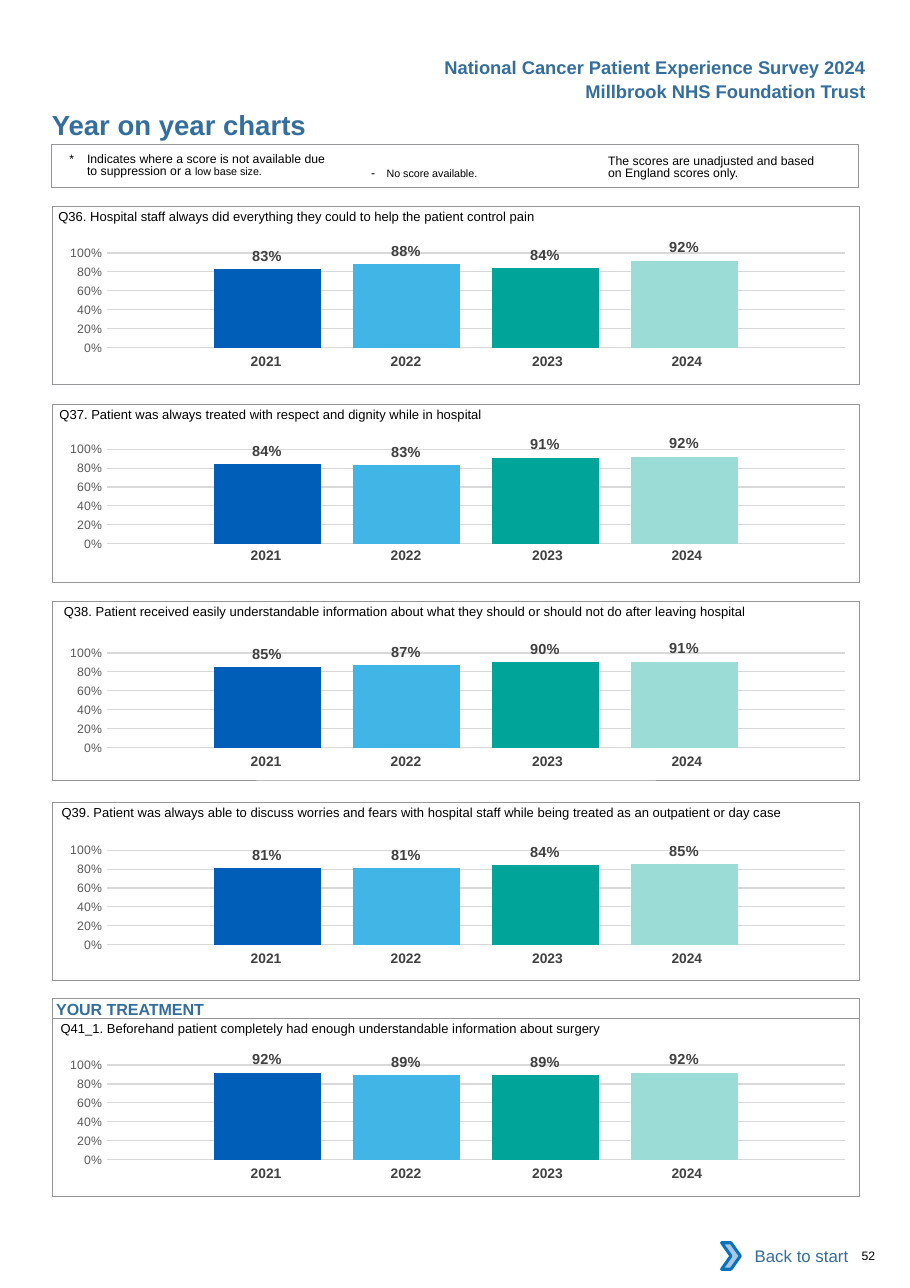
from dataclasses import dataclass

from lxml import etree
from pptx import Presentation
from pptx.chart.data import CategoryChartData
from pptx.dml.color import RGBColor
from pptx.enum.chart import XL_CHART_TYPE as Chart
from pptx.enum.chart import XL_LABEL_POSITION as Spot
from pptx.enum.chart import XL_TICK_MARK as Tick
from pptx.enum.shapes import MSO_SHAPE as Kind
from pptx.enum.text import MSO_ANCHOR as Anchor
from pptx.enum.text import MSO_AUTO_SIZE as Fit
from pptx.enum.text import PP_ALIGN as Align
from pptx.oxml import parse_xml
from pptx.oxml.ns import nsdecls
from pptx.shapes.autoshape import Shape
from pptx.slide import Slide
from pptx.text.text import Font, TextFrame
from pptx.util import Inches, Pt

BLACK = RGBColor(0x00, 0x00, 0x00)
WHITE = RGBColor(0xFF, 0xFF, 0xFF)
BLUE = RGBColor(0x33, 0x6E, 0x9F)
EDGE = RGBColor(0x93, 0x95, 0x98)
GRID = RGBColor(0xD9, 0xD9, 0xD9)
AXIS = RGBColor(0x59, 0x59, 0x59)
LABEL = RGBColor(0x40, 0x40, 0x40)
YEAR = RGBColor(0x41, 0x40, 0x42)
ARROW = RGBColor(0xA8, 0xC7, 0xE9)
ARROW_EDGE = RGBColor(0x0A, 0x74, 0xBB)
BARS = (RGBColor(0x00, 0x5E, 0xB8), RGBColor(0x41, 0xB6, 0xE6),
        RGBColor(0x00, 0xA4, 0x99), RGBColor(0x9C, 0xDC, 0xD7))

YEARS = ("2021", "2022", "2023", "2024")
WIDTHS = (1.27, 1.27, 1.34, 1.27)
INSETS = (0, 0, 0.04, 0.12)
PLOT = {"x": 0.079, "y": 0.145, "w": 0.915, "h": 0.666}
LEFT, WIDE, TALL = 0.48, 7.32, 1.62


@dataclass
class Panel:
    text: str
    left: float
    top: float
    chart: float
    years: float
    scores: tuple[float, ...]


@dataclass
class Note:
    text: str
    left: float
    top: float
    width: float
    hang: float = 0
    small: str = ""


PANELS = (
    Panel("Q36. Hospital staff always did everything they could to help the patient control pain",
          0.53, 1.87, 2.11, 3.16, (0.83, 0.88, 0.84, 0.92)),
    Panel("Q37. Patient was always treated with respect and dignity while in hospital",
          0.54, 3.67, 3.89, 4.92, (0.84, 0.83, 0.91, 0.92)),
    Panel("Q38. Patient received easily understandable information about what they should "
          "or should not do after leaving hospital",
          0.58, 5.46, 5.74, 6.79, (0.85, 0.87, 0.9, 0.91)),
    Panel("Q39. Patient was always able to discuss worries and fears with hospital staff "
          "while being treated as an outpatient or day case",
          0.56, 7.28, 7.53, 8.58, (0.81, 0.81, 0.84, 0.85)),
    Panel("Q41_1. Beforehand patient completely had enough understandable information about surgery",
          0.55, 9.24, 9.48, 10.53, (0.92, 0.89, 0.89, 0.92)),
)
NOTES = (
    Note("*\tIndicates where a score is not available due to suppression or a ",
         0.63, 1.39, 2.35, 0.16, "low base size."),
    Note("-\t", 3.37, 1.52, 1.8, 0.14, "No score available."),
    Note("The scores are unadjusted and based on England scores only.", 5.52, 1.41, 1.95),
)


def style(font: Font, size: float, color: RGBColor, bold: bool = False) -> None:
    font.name, font.size, font.bold = "Arial", Pt(size), bold
    font.color.rgb = color


def inset(frame: TextFrame, left: float = 0, top: float = 0) -> None:
    frame.margin_left, frame.margin_top = Inches(left), Inches(top)
    frame.margin_right = frame.margin_bottom = 0
    frame.word_wrap = True


def write(slide: Slide, text: str, left: float, top: float, width: float, high: float,
          size: float, color: RGBColor = BLACK, bold: bool = False,
          align: Align = Align.LEFT) -> TextFrame:
    box = slide.shapes.add_textbox(Inches(left), Inches(top), Inches(width), Inches(high))
    frame = box.text_frame
    inset(frame)
    para = frame.paragraphs[0]
    para.text, para.alignment = text, align
    style(para.font, size, color, bold)
    return frame


def outline(slide: Slide, left: float, top: float, width: float, high: float,
            weight: float = 0.5) -> Shape:
    box = slide.shapes.add_shape(Kind.RECTANGLE, Inches(left), Inches(top),
                                 Inches(width), Inches(high))
    box.shadow.inherit = False
    box.fill.background()
    box.line.color.rgb = EDGE
    box.line.width = Pt(weight)
    return box


def add_note(slide: Slide, note: Note) -> None:
    frame = write(slide, note.text, note.left, note.top, note.width, 0.24, 8)
    para = frame.paragraphs[0]
    para.line_spacing = Pt(8.1)
    if note.hang:
        props = para._p.get_or_add_pPr()
        props.set("marL", str(Inches(note.hang)))
        props.set("indent", str(-Inches(note.hang)))
    if note.small:
        run = para.add_run()
        run.text = note.small
        run.font.size = Pt(7)


def add_years(slide: Slide, top: float) -> None:
    table = slide.shapes.add_table(1, len(YEARS), Inches(1.73), Inches(top),
                                   Inches(sum(WIDTHS)), Inches(0.27)).table
    table.first_row = table.horz_banding = False
    for col, (year, width, right) in enumerate(zip(YEARS, WIDTHS, INSETS)):
        table.columns[col].width = Inches(width)
        cell = table.cell(0, col)
        cell.fill.background()
        cell.margin_right = Inches(right)
        para = cell.text_frame.paragraphs[0]
        para.text, para.alignment = year, Align.CENTER
        style(para.font, 9, YEAR, True)


def add_bars(slide: Slide, panel: Panel) -> None:
    data = CategoryChartData(number_format="0%")
    data.categories = ["1"]
    for num, score in enumerate(panel.scores, 1):
        data.add_series(f"Series {num}", [score])
    chart = slide.shapes.add_chart(Chart.COLUMN_CLUSTERED, Inches(0.39), Inches(panel.chart),
                                   Inches(WIDE), Inches(1.29), data).chart
    chart.has_title = chart.has_legend = False
    chart.font.name, chart.font.size = "Calibri", Pt(10)
    chart.font.color.rgb = BLACK
    chart.category_axis.visible = False
    axis = chart.value_axis
    axis.minimum_scale, axis.maximum_scale, axis.major_unit = 0, 1, 0.2
    axis.major_tick_mark = axis.minor_tick_mark = Tick.NONE
    axis.format.line.fill.background()
    axis.tick_labels.number_format = "0%"
    axis.tick_labels.number_format_is_linked = False
    style(axis.tick_labels.font, 8, AXIS)
    grid = axis.major_gridlines.format.line
    grid.color.rgb, grid.width = GRID, Pt(0.75)
    plot = chart.plots[0]
    plot.gap_width, plot.overlap, plot.vary_by_categories = 200, -30, False
    for series, color in zip(plot.series, BARS):
        series.format.fill.solid()
        series.format.fill.fore_color.rgb = color
        labels = series.data_labels
        labels.show_value, labels.position = True, Spot.OUTSIDE_END
        labels.number_format, labels.number_format_is_linked = "0%", False
        style(labels.font, 9.5, LABEL, True)
    place_plot(chart._chartSpace.chart.plotArea)


def place_plot(area: etree._Element) -> None:
    """Fix the inner plot area by fractions of the chart."""
    for old in area.findall("{*}layout"):
        area.remove(old)
    modes = '<c:layoutTarget val="inner"/><c:xMode val="edge"/><c:yMode val="edge"/>'
    sizes = "".join(f'<c:{key} val="{val}"/>' for key, val in PLOT.items())
    area.insert(0, parse_xml(f'<c:layout {nsdecls("c")}><c:manualLayout>{modes}{sizes}'
                             '</c:manualLayout></c:layout>'))


def add_panel(slide: Slide, panel: Panel) -> None:
    add_years(slide, panel.years)
    add_bars(slide, panel)
    outline(slide, LEFT, panel.top, WIDE, TALL)
    write(slide, panel.text, panel.left, panel.top + 0.02, 7.2, 0.15, 8.5)


def add_title(slide: Slide) -> None:
    title = slide.shapes.title
    title.left, title.top = Inches(0.47), Inches(0.98)
    title.width, title.height = Inches(4.5), Inches(0.3)
    frame = title.text_frame
    inset(frame)
    frame.auto_size, frame.vertical_anchor = Fit.NONE, Anchor.TOP
    para = frame.paragraphs[0]
    para.text, para.alignment = "Year on year charts", Align.LEFT
    style(para.font, 18, BLUE, True)


def add_section(slide: Slide) -> None:
    box = outline(slide, LEFT, 9.06, WIDE, 0.18)
    frame = box.text_frame
    inset(frame, 0.03, 0.01)
    frame.vertical_anchor = Anchor.TOP
    para = frame.paragraphs[0]
    para.text, para.alignment = "YOUR TREATMENT", Align.LEFT
    style(para.font, 10.5, BLUE, True)


def add_footer(slide: Slide) -> None:
    back = outline(slide, 6.62, 11.19, 1.18, 0.42)
    back.fill.solid()
    back.fill.fore_color.rgb = WHITE
    back.line.fill.background()
    back.text_frame.vertical_anchor = Anchor.MIDDLE
    para = back.text_frame.paragraphs[0]
    para.text, para.alignment = "Back to start", Align.RIGHT
    style(para.font, 11, BLUE)
    arrow = slide.shapes.add_shape(Kind.CHEVRON, Inches(6.55), Inches(11.28),
                                   Inches(0.17), Inches(0.24))
    arrow.shadow.inherit = False
    arrow.fill.solid()
    arrow.fill.fore_color.rgb = ARROW
    arrow.line.color.rgb, arrow.line.width = ARROW_EDGE, Pt(2)
    write(slide, "52", 7.82, 11.33, 0.41, 0.13, 8)


def main() -> None:
    deck = Presentation()
    deck.slide_width, deck.slide_height = Inches(8.26), Inches(11.69)
    slide = deck.slides.add_slide(deck.slide_layouts[5])
    add_title(slide)
    for text, top in (("National Cancer Patient Experience Survey 2024", 0.51),
                      ("Millbrook NHS Foundation Trust", 0.73)):
        write(slide, text, 3.86, top, 4, 0.2, 12, BLUE, True, Align.RIGHT)
    outline(slide, 0.47, 1.31, WIDE, 0.39, 0.75)
    for note in NOTES:
        add_note(slide, note)
    add_section(slide)
    for panel in PANELS:
        add_panel(slide, panel)
    add_footer(slide)
    deck.save("out.pptx")


if __name__ == "__main__":
    main()
